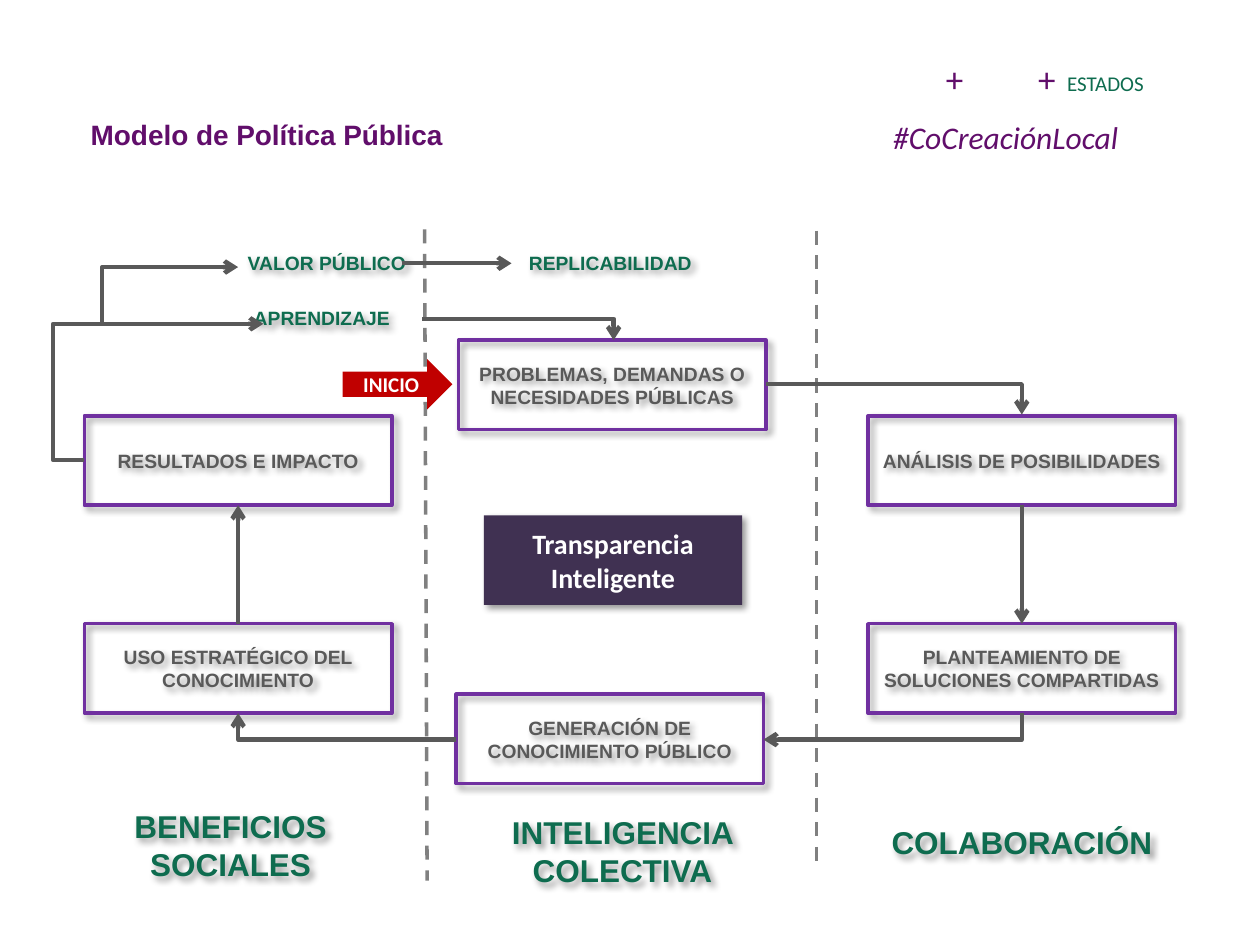
from dataclasses import dataclass

import pptx
import pptx.dml.color
import pptx.enum.dml
import pptx.enum.shapes
import pptx.enum.text
import pptx.oxml
import pptx.oxml.ns
import pptx.util
from lxml import etree

Inches = pptx.util.Inches
Pt = pptx.util.Pt
qn = pptx.oxml.ns.qn
SHAPE = pptx.enum.shapes.MSO_SHAPE
CONNECTOR = pptx.enum.shapes.MSO_CONNECTOR
ALIGN = pptx.enum.text.PP_ALIGN
ANCHOR = pptx.enum.text.MSO_ANCHOR
AUTO = pptx.enum.text.MSO_AUTO_SIZE


@dataclass(frozen=True)
class Theme:
    """Colours, fonts and type sizes of the slide."""
    purple: str = "610E6B"
    border: str = "7030A0"
    dark: str = "403152"
    green: str = "0E6C4F"
    grey: str = "595959"
    divider: str = "808080"
    red: str = "C00000"
    white: str = "FFFFFF"
    sans: str = "Arial"
    body: str = "Calibri"
    label: int = 11
    small: int = 12
    title: int = 16
    heading: int = 18
    plus: int = 20


T = Theme()
BOX_W, BOX_H = 2.44, 0.71
STEPS = {
    "problems": (3.64, 2.7, "PROBLEMAS, DEMANDAS O NECESIDADES PÚBLICAS"),
    "analysis": (6.89, 3.3, "ANÁLISIS DE POSIBILIDADES"),
    "solutions": (6.89, 4.95, "PLANTEAMIENTO DE SOLUCIONES COMPARTIDAS"),
    "knowledge": (3.62, 5.51, "GENERACIÓN DE CONOCIMIENTO PÚBLICO"),
    "use": (0.67, 4.95, "USO ESTRATÉGICO DEL CONOCIMIENTO"),
    "results": (0.67, 3.3, "RESULTADOS E IMPACTO"),
}
OUTCOMES = [
    (1.81, 1.85, "VALOR PÚBLICO"),
    (4.06, 1.85, "REPLICABILIDAD"),
    (1.77, 2.29, "APRENDIZAJE"),
]
HEADINGS = [
    (0.47, 6.47, "BENEFICIOS SOCIALES"),
    (3.58, 6.52, "INTELIGENCIA COLECTIVA"),
    (6.75, 6.45, "COLABORACIÓN"),
]
ELBOWS = [
    ((6.08, 3.05, 2.03, 0.24), "bentConnector2", {}, None),
    ((6.98, 4.74, 0.21, 2.05), "bentConnector2", {"rot": 90}, None),
    ((1.89, 5.66, 1.73, 0.21), "bentConnector2", {"rot": 180}, None),
    ((0.67, 2.57, 1.42, 1.08), "bentConnector3", {"rot": 180, "flipH": 1}, -0.176),
    ((0.83, 2.12, 1.06, 0.45), "bentConnector3", {"flipV": 1}, -0.017),
    ((3.35, 2.53, 1.52, 0.17), "bentConnector2", {}, None),
]


def rgb(value):
    """Return a colour object for a hex value."""
    return pptx.dml.color.RGBColor.from_string(value)


def write(sp, text, size, color, name, align=ALIGN.CENTER, anchor=ANCHOR.MIDDLE,
          wrap=True, auto=AUTO.NONE, **font):
    """Put one formatted paragraph in a shape."""
    tf = sp.text_frame
    frame = {"word_wrap": wrap, "auto_size": auto, "vertical_anchor": anchor}
    for key, value in frame.items():
        setattr(tf, key, value)
    p = tf.paragraphs[0]
    p.alignment = align
    r = p.add_run()
    r.text = text
    for key, value in {"size": Pt(size), "name": name, **font}.items():
        setattr(r.font, key, value)
    r.font.color.rgb = rgb(color)


def add_shadow(sp):
    """Give a shape a soft shadow to the lower right."""
    sp.shadow.inherit = False
    effects = sp._element.spPr.find(qn("a:effectLst"))
    shadow = etree.SubElement(effects, qn("a:outerShdw"), blurRad=str(Pt(4)),
                              dist=str(Pt(3)), dir="2700000", algn="tl", rotWithShape="0")
    color = etree.SubElement(shadow, qn("a:srgbClr"), val="000000")
    etree.SubElement(color, qn("a:alpha"), val="40000")


def add_block(s, kind, at, fill=None, line=None, shadow=True):
    """Add a preset shape with optional fill, outline and shadow."""
    sp = s.shapes.add_shape(kind, *map(Inches, at))
    sp.shadow.inherit = False
    if fill:
        sp.fill.solid()
        sp.fill.fore_color.rgb = rgb(fill)
    else:
        sp.fill.background()
    if line:
        sp.line.color.rgb = rgb(line)
        sp.line.width = Pt(2)
    else:
        sp.line.fill.background()
    if shadow:
        add_shadow(sp)
    return sp


def add_label(s, at, *style, shadow=False, **options):
    """Add a text box, with a shadow when asked."""
    sp = s.shapes.add_textbox(*map(Inches, at))
    write(sp, *style, **options)
    if shadow:
        add_shadow(sp)


def add_line(s, kind, ends, color=T.grey, width=2.5, dash=None):
    """Add a connector: dashed and plain, or solid with an arrowhead."""
    c = s.shapes.add_connector(kind, *map(Inches, ends))
    c.line.color.rgb = rgb(color)
    c.line.width = Pt(width)
    if dash:
        c.line.dash_style = dash
    else:
        etree.SubElement(c.line._get_or_add_ln(), qn("a:tailEnd"), type="arrow")
    etree.SubElement(c._element.spPr, qn("a:effectLst"))
    return c


def add_elbow(s, at, preset, turn, adjust):
    """Add a bent arrow with its turn, flips and bend position."""
    x, y, w, h = at
    c = add_line(s, CONNECTOR.ELBOW, (x, y, x + w, y + h))
    xfrm = c._element.spPr.find(qn("a:xfrm"))
    for key, value in turn.items():
        xfrm.set(key, str(value * 60000 if key == "rot" else value))
    geom = c._element.spPr.find(qn("a:prstGeom"))
    geom.set("prst", preset)
    if adjust is not None:
        etree.SubElement(geom.find(qn("a:avLst")), qn("a:gd"), name="adj1",
                         fmla=f"val {round(adjust * 100000)}")


def add_header(s):
    """Fill the title and the campaign text at the top right."""
    title = s.shapes.title
    for key, value in zip(("left", "top", "width", "height"), (0.62, 0.88, 3.39, 0.52)):
        setattr(title, key, Inches(value))
    top_left = {"align": ALIGN.LEFT, "anchor": ANCHOR.TOP}
    write(title, "Modelo de Política Pública", T.title, T.purple, T.sans, bold=True, **top_left)
    top_left["auto"] = AUTO.SHAPE_TO_FIT_TEXT
    add_label(s, (8.37, 0.51, 1.48, 0.3), "ESTADOS", T.small, T.green, T.body, **top_left)
    for x in (7.41, 8.14):
        add_label(s, (x, 0.41, 0.36, 0.44), "+", T.plus, T.purple, T.body, **top_left)
    add_label(s, (6.99, 0.89, 2.07, 0.4), "#CoCreaciónLocal", T.heading, T.purple, T.body,
              italic=True, wrap=False, **top_left)


def main():
    """Build the policy model slide and save it."""
    prs = pptx.Presentation()
    prs.slide_width, prs.slide_height = Inches(10), Inches(7.5)
    s = prs.slides.add_slide(prs.slide_layouts[5])
    add_header(s)
    core = add_block(s, SHAPE.RECTANGLE, (3.84, 4.09, 2.05, 0.71), fill=T.dark)
    write(core, "Transparencia Inteligente", T.title, T.white, T.body, bold=True)
    steps = {}
    for key, (x, y, text) in STEPS.items():
        steps[key] = add_block(s, SHAPE.RECTANGLE, (x, y, BOX_W, BOX_H), line=T.border)
        write(steps[key], text, T.label, T.grey, T.sans, bold=True)
    for labels, width, size in ((OUTCOMES, 1.57, T.label), (HEADINGS, 2.72, T.heading)):
        for x, y, text in labels:
            add_label(s, (x, y, width, 0.47), text, size, T.green, T.sans,
                      bold=True, shadow=True)
    for ends in ((3.37, 1.82, 3.39, 6.99), (6.48, 1.83, 6.48, 6.91)):
        add_line(s, CONNECTOR.STRAIGHT, ends, T.divider, 2, pptx.enum.dml.MSO_LINE.DASH)
    for elbow in ELBOWS:
        add_elbow(s, *elbow)
    for start, start_side, end, end_side in (("analysis", 2, "solutions", 0),
                                             ("use", 0, "results", 2)):
        c = add_line(s, CONNECTOR.STRAIGHT, (0, 0, 0, 0))
        c.begin_connect(steps[start], start_side)
        c.end_connect(steps[end], end_side)
    add_line(s, CONNECTOR.STRAIGHT, (3.19, 2.09, 4.06, 2.09))
    begin = add_block(s, SHAPE.RIGHT_ARROW, (2.72, 2.85, 0.87, 0.4), fill=T.red, shadow=False)
    write(begin, "INICIO", T.small, T.white, T.body, bold=True)
    prs.save("out.pptx")


if __name__ == "__main__":
    main()
